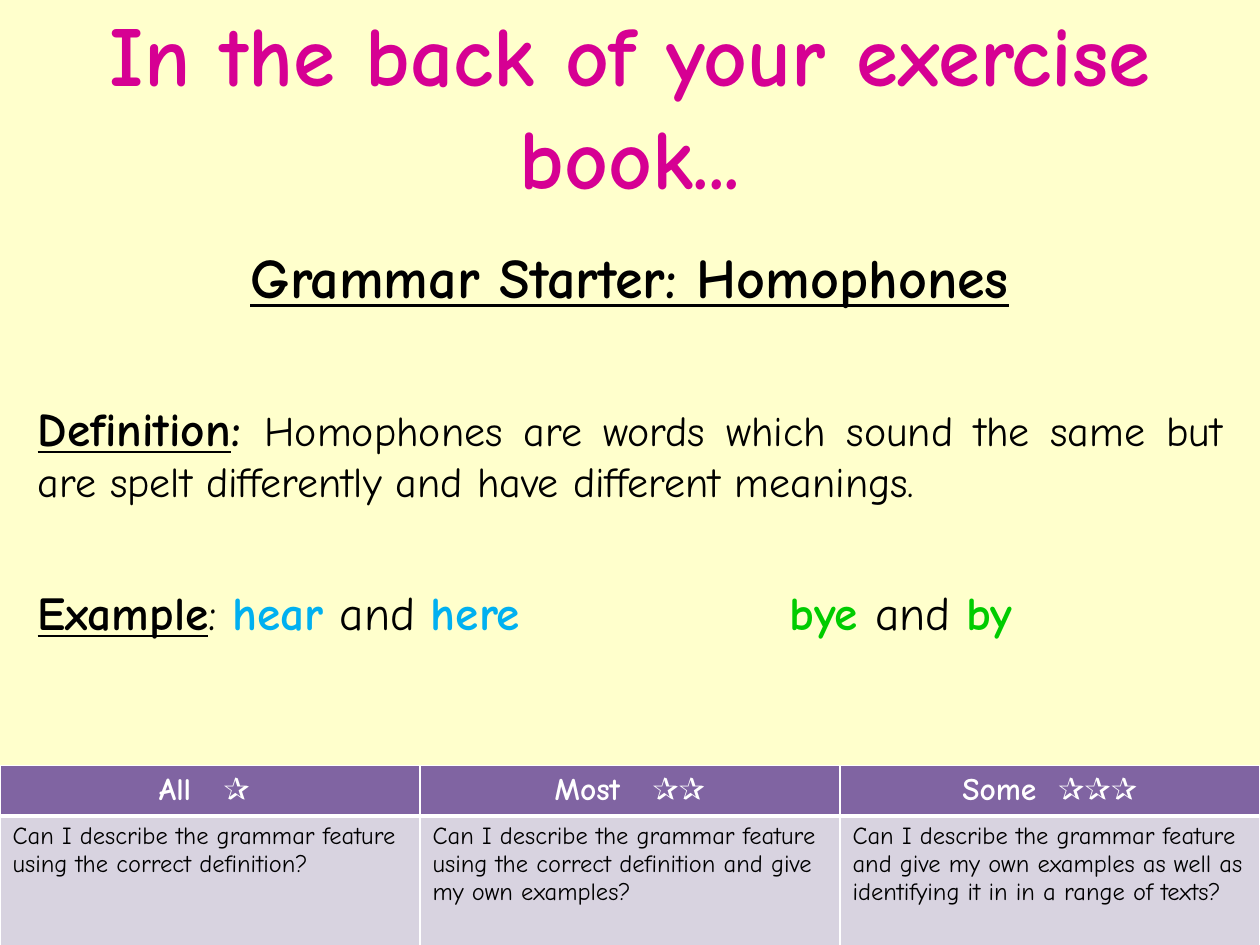
from lxml import etree
from pptx import Presentation
from pptx.dml.color import RGBColor
from pptx.enum.text import MSO_ANCHOR, PP_ALIGN
from pptx.oxml.ns import qn
from pptx.util import Inches, Pt

LEFT, CENTER, JUSTIFY = PP_ALIGN.LEFT, PP_ALIGN.CENTER, PP_ALIGN.JUSTIFY
TOP, MIDDLE = MSO_ANCHOR.TOP, MSO_ANCHOR.MIDDLE
COLORS = {
    "page": "FFFFCC", "title": "D60093", "ink": "000000", "white": "FFFFFF",
    "blue": "00B0F0", "green": "00CC00", "head": "8064A2", "cell": "D8D3E0",
}
FONT = "Comic Neue"


def rgb(name):
    """Return a named colour."""
    return RGBColor.from_string(COLORS[name])


class Deck:
    """Holds the style and the current slide, with one method per element."""

    def __init__(self, width, height):
        """Start a presentation with one blank slide."""
        self.prs = Presentation()
        self.prs.slide_width, self.prs.slide_height = Inches(width), Inches(height)
        self.s = self.prs.slides.add_slide(self.prs.slide_layouts[6])
        fill = self.s.background.fill
        fill.solid()
        fill.fore_color.rgb = rgb("page")

    def box(self, x, y, w, h):
        """Convert shares of the slide to lengths."""
        W, H = self.prs.slide_width, self.prs.slide_height
        return int(x * W), int(y * H), int(w * W), int(h * H)

    def style(self, font, size=None, color=None, bold=None, underline=None):
        """Set the given font properties."""
        font.name = FONT
        if size:
            font.size = Pt(size)
        if color:
            font.color.rgb = rgb(color)
        if bold is not None:
            font.bold = bold
        if underline is not None:
            font.underline = underline

    def paragraph(self, p, runs, align=LEFT, before=0, tab=None, **font):
        """Fill a paragraph with (text, style) runs over a common font."""
        p.alignment, p.space_before = align, Pt(before)
        self.style(p.font, **font)
        for text, look in runs:
            r = p.add_run()
            r.text = text
            self.style(r.font, **{**font, **look})
        if tab:
            tabs = etree.Element(qn("a:tabLst"))
            etree.SubElement(tabs, qn("a:tab"), pos=str(Inches(tab)), algn="l")
            p._p.get_or_add_pPr().find(qn("a:defRPr")).addprevious(tabs)

    def text(self, at, paragraphs, anchor=TOP):
        """Add a wrapped text box."""
        tf = self.s.shapes.add_textbox(*self.box(*at)).text_frame
        tf.word_wrap, tf.vertical_anchor = True, anchor
        for i, para in enumerate(paragraphs):
            self.paragraph(tf.add_paragraph() if i else tf.paragraphs[0], **para)

    def cell(self, cell, fill, **edges):
        """Fill a cell and draw its white borders."""
        cell.fill.solid()
        cell.fill.fore_color.rgb = rgb(fill)
        for i, side in enumerate("LRTB"):
            ln = etree.Element(qn(f"a:ln{side}"), w=str(Pt(edges.get(side, 1))))
            solid = etree.SubElement(ln, qn("a:solidFill"))
            etree.SubElement(solid, qn("a:srgbClr"), val=COLORS["white"])
            cell._tc.get_or_add_tcPr().insert(i, ln)

    def goals(self, at, rows, columns):
        """Add the table of goals from (level, gap, stars, goal) columns."""
        table = self.s.shapes.add_table(2, len(columns), *self.box(*at)).table
        for row, height in zip(table.rows, rows):
            row.height = Inches(height)
        for i, (level, gap, stars, goal) in enumerate(columns):
            head, body = table.cell(0, i), table.cell(1, i)
            self.cell(head, "head", B=3)
            self.cell(body, "cell", T=3)
            p = head.text_frame.paragraphs[0]
            self.paragraph(p, [(level, {}), (" ", {}), (stars, {})],
                           CENTER, size=18, color="white", bold=True)
            p.runs[1]._r.get_or_add_rPr().set("spc", str(gap * 100))
            self.paragraph(body.text_frame.paragraphs[0], [(goal, {})],
                           size=14, color="ink", bold=False)


def main():
    """Build the slide."""
    deck = Deck(10, 7.5)
    label = dict(size=27, bold=True, underline=True)
    blue, green = (dict(color=c, bold=True) for c in ("blue", "green"))
    deck.text((0, 0, 1, 0.22), [
        dict(runs=[("In the back of your exercise book...", {})],
             align=CENTER, size=48.6, color="title", bold=True),
    ], MIDDLE)
    deck.text((0.02, 0.25, 0.96, 0.64), [
        dict(runs=[("Grammar Starter: Homophones", {})],
             align=CENTER, size=32, color="ink", bold=True, underline=True),
        dict(runs=[("Definition", label), (": ", dict(size=27, bold=True)),
                   ("Homophones are words which sound the same but are spelt "
                    "differently and have different meanings.", {})],
             align=JUSTIFY, before=51, size=24, color="ink"),
        dict(runs=[("Example", label), (": ", {}), ("hear", blue), (" and ", {}),
                   ("here\t", blue), ("bye ", green), ("and ", {}), ("by", green)],
             before=44, tab=5.97, size=27, color="ink"),
    ])
    ask = "Can I describe the grammar feature "
    deck.goals((0, 0.81, 1, 0.18), (0.33, 1.03), [
        ("All", 12, "✰ ", ask + "using the correct definition?"),
        ("Most", 12, "✰✰", ask + "using the correct definition and give my own examples?"),
        ("Some", 6, "✰✰✰", ask + "and give my own examples as well as "
                                 "identifying it in in a range of texts?"),
    ])
    deck.prs.save("out.pptx")


if __name__ == "__main__":
    main()
